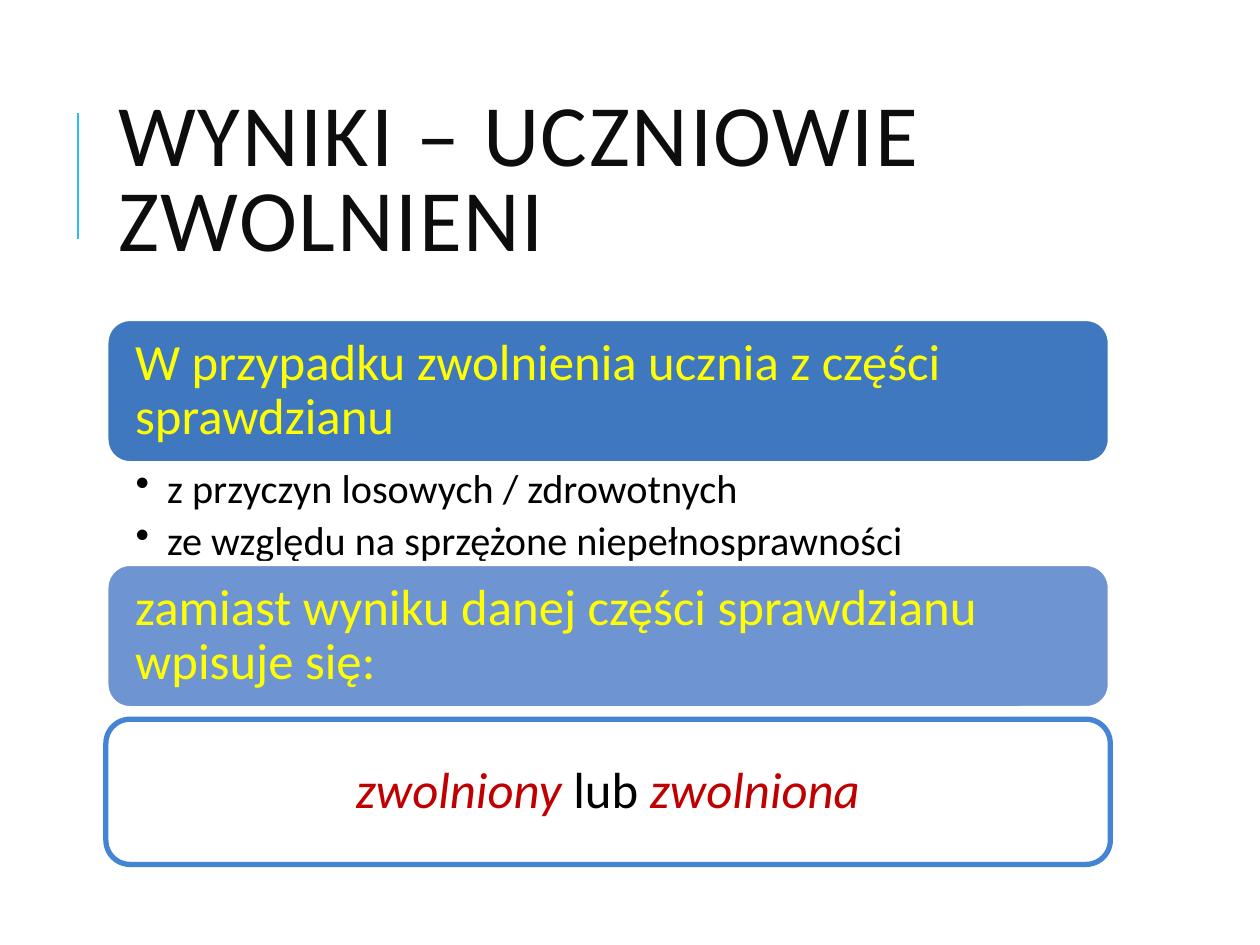
"""Builds the slide on results of exempted pupils."""
from lxml import etree
from pptx import Presentation, util as u
from pptx.dml.color import RGBColor
from pptx.enum import shapes, text
from pptx.oxml.ns import qn

COLORS = {
    "accent": "31B6FD", "title": "0D0D0D", "white": "FFFFFF",
    "black": "000000", "yellow": "FFFF00", "red": "C00000",
    "condition": "3F78BF", "instruction": "6E95D1", "border": "4584D3",
}
FONT = "Calibri"
LEFT, WIDTH, PANEL_HEIGHT = 60.5, 574, 83


def color(name):
    return RGBColor.from_string(COLORS[name])


def set_font(font, size, ink):
    font.name = FONT
    font.size = u.Pt(size)
    font.color.rgb = color(ink)


def set_frame(frame, anchor, horizontal, vertical):
    frame.word_wrap = True
    frame.vertical_anchor = anchor
    frame.margin_left = frame.margin_right = u.Pt(horizontal)
    frame.margin_top = frame.margin_bottom = u.Pt(vertical)


def add_accent_line(slide):
    accent = slide.shapes.add_connector(
        shapes.MSO_CONNECTOR.STRAIGHT, u.Pt(44.7), u.Pt(136.8), u.Pt(44.7), u.Pt(64.8))
    accent.line.color.rgb = color("accent")
    accent.line.width = u.Pt(1.5)
    etree.SubElement(accent._element.spPr, qn("a:effectLst"))


def add_title(slide, wording):
    title = slide.shapes.add_textbox(u.Pt(LEFT), u.Pt(46), u.Pt(WIDTH), u.Pt(118))
    set_frame(title.text_frame, text.MSO_ANCHOR.MIDDLE, 7.2, 3.6)
    heading = title.text_frame.paragraphs[0]
    heading.line_spacing = 0.8
    set_font(heading.font, 50, "title")
    run = heading.add_run()
    run.text = wording
    run._r.get_or_add_rPr().set("spc", "100")


def add_panel(slide, top, fill, border, ink):
    """Adds a rounded panel and returns its empty paragraph."""
    panel = slide.shapes.add_shape(
        shapes.MSO_SHAPE.ROUNDED_RECTANGLE,
        u.Pt(LEFT), u.Pt(top), u.Pt(WIDTH), u.Pt(PANEL_HEIGHT))
    panel.shadow.inherit = False
    panel.fill.solid()
    panel.fill.fore_color.rgb = color(fill)
    panel.line.color.rgb = color(border)
    panel.line.width = u.Pt(3)
    set_frame(panel.text_frame, text.MSO_ANCHOR.MIDDLE, 12.7, 12.7)
    message = panel.text_frame.paragraphs[0]
    message.alignment = text.PP_ALIGN.LEFT
    message.line_spacing = 0.9
    set_font(message.font, 29, ink)
    return message


def add_reasons(slide, top, reasons):
    box = slide.shapes.add_textbox(u.Pt(LEFT), u.Pt(top), u.Pt(WIDTH), u.Pt(57))
    frame = box.text_frame
    set_frame(frame, text.MSO_ANCHOR.TOP, 17, 2.9)
    for index, reason in enumerate(reasons):
        item = frame.add_paragraph() if index else frame.paragraphs[0]
        item.text = reason
        item.level = 1
        item.line_spacing = 0.9
        item.space_after = u.Pt(4.6)
        properties = item._p.get_or_add_pPr()
        properties.set("marL", str(u.Pt(18)))
        properties.set("indent", str(u.Pt(-18)))
        etree.SubElement(properties, qn("a:buChar"), char="•")
        set_font(item.font, 23, "black")


def add_entry(message, parts):
    message.alignment = text.PP_ALIGN.CENTER
    for wording, ink, italic in parts:
        run = message.add_run()
        run.text = wording
        run.font.color.rgb = color(ink)
        run.font.italic = italic


def main():
    deck = Presentation()
    deck.slide_width, deck.slide_height = u.Pt(720), u.Pt(540)
    slide = deck.slides.add_slide(deck.slide_layouts[6])
    add_accent_line(slide)
    add_title(slide, "WYNIKI – UCZNIOWIE ZWOLNIENI")
    condition = add_panel(slide, 182, "condition", "white", "yellow")
    condition.text = "W przypadku zwolnienia ucznia z części sprawdzianu"
    add_reasons(slide, 265, ["z przyczyn losowych / zdrowotnych",
                             "ze względu na sprzężone niepełnosprawności"])
    instruction = add_panel(slide, 322, "instruction", "white", "yellow")
    instruction.text = "zamiast wyniku danej części sprawdzianu wpisuje się:"
    entry = add_panel(slide, 411, "white", "border", "black")
    add_entry(entry, [("zwolniony", "red", True), (" lub ", "black", False),
                      ("zwolniona", "red", True)])
    deck.save("out.pptx")


if __name__ == "__main__":
    main()
